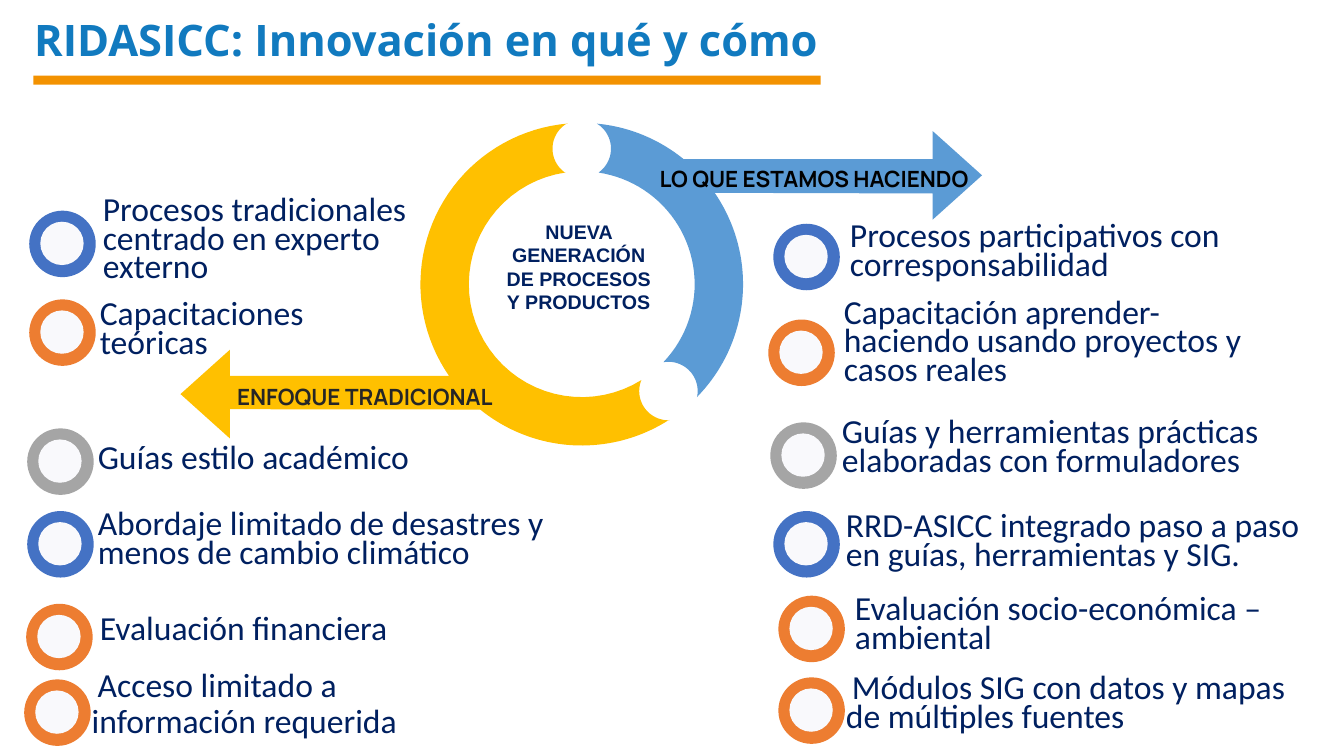
import math
from dataclasses import dataclass

import pptx
import pptx.dml.color
import pptx.enum.shapes
import pptx.enum.text
import pptx.util

EMU_PER_PX = 9144  # 100 px to the inch
ALIGN = pptx.enum.text.PP_ALIGN
ANCHOR = pptx.enum.text.MSO_ANCHOR
SHAPES = pptx.enum.shapes.MSO_SHAPE


@dataclass(frozen=True)
class Theme:
    title: str = "117ABF"
    rule: str = "F39200"
    navy: str = "002060"
    black: str = "000000"
    charcoal: str = "262626"
    disc: str = "F9F9FC"
    blue: str = "4472C4"
    orange: str = "ED7D31"
    gray: str = "A5A5A5"
    new: str = "5B9BD5"
    old: str = "FFC000"
    title_pt: int = 31
    item_pt: int = 24
    label_pt: int = 16
    centre_pt: int = 14
    leading_pt: float = 20.5
    gap_pt: int = 5


def px(value):
    return pptx.util.Emu(round(value * EMU_PER_PX))


def rgb(colour):
    return pptx.dml.color.RGBColor.from_string(colour)


def arc(centre, radius, start, end, steps=40):
    """Points along a circle; angles in degrees, clockwise from the right."""
    angles = [math.radians(start + (end - start) * i / steps) for i in range(steps + 1)]
    return [(centre[0] + radius * math.cos(a), centre[1] + radius * math.sin(a))
            for a in angles]


class SlideBuilder:
    def __init__(self, slide, theme):
        self.shapes = slide.shapes
        self.theme = theme

    def paint(self, shape, colour):
        shape.shadow.inherit = False
        shape.fill.solid()
        shape.fill.fore_color.rgb = rgb(colour)
        shape.line.fill.background()

    def block(self, kind, x, y, w, h, colour):
        self.paint(self.shapes.add_shape(kind, px(x), px(y), px(w), px(h)), colour)

    def outline(self, points, colour):
        emu = [(px(x), px(y)) for x, y in points]
        builder = self.shapes.build_freeform(*emu[0], scale=1.0)
        builder.add_line_segments(emu[1:], close=True)
        self.paint(builder.convert_to_shape(), colour)

    def text(self, lines, box, font, size, colour, bold=False, align=ALIGN.LEFT,
             anchor=ANCHOR.TOP, wrap=True):
        frame = self.shapes.add_textbox(*map(px, box)).text_frame
        frame.word_wrap = wrap
        frame.vertical_anchor = anchor
        for i, line in enumerate(lines):
            paragraph = frame.add_paragraph() if i else frame.paragraphs[0]
            paragraph.alignment = align
            run = paragraph.add_run()
            run.text = line
            run.font.name = font
            run.font.size = pptx.util.Pt(size)
            run.font.bold = bold
            run.font.color.rgb = rgb(colour)
        return frame

    def ring(self, x, y, colour):
        self.block(SHAPES.OVAL, x, y, 66, 66, colour)
        self.block(SHAPES.OVAL, x + 11, y + 11, 43, 43, self.theme.disc)

    def item(self, lines, x, y, w, rows, indent=0):
        """Tightly leaded text, its box as high as its rows; indent moves the first row."""
        frame = self.text(lines, (x, y, w, 10 + 29 * rows), "Calibri",
                          self.theme.item_pt, self.theme.navy, anchor=ANCHOR.MIDDLE)
        frame.margin_left = frame.margin_right = frame.margin_bottom = px(5)
        frame.margin_top = px(3)
        for i, paragraph in enumerate(frame.paragraphs):
            paragraph.line_spacing = pptx.util.Pt(self.theme.leading_pt)
            if i:
                paragraph.space_before = pptx.util.Pt(self.theme.gap_pt)
        if indent:
            properties = frame.paragraphs[0]._p.get_or_add_pPr()
            properties.set("marL", "0")
            properties.set("indent", str(px(indent)))

    def label(self, words, box, colour):
        self.text([words], box, "Manrope", self.theme.label_pt, colour, True,
                  ALIGN.CENTER, ANCHOR.BOTTOM, wrap=False)


def draw_cycle(page, theme):
    hub, outer, inner = (577, 282), 160, 112
    top_notch, low_notch, notch = (577, 147.5), (663, 388), 29
    new_approach = (
        [(974, 174), (925, 130), (925, 158)]
        + arc(hub, outer, -50.8, -84.6)
        + arc(top_notch, notch, -58.5, 54)
        + arc(hub, inner, -81.3, 43.5)
        + arc(low_notch, notch, -100, 12)
        + arc(hub, outer, 44.5, -34.5)
        + [(925, 192), (925, 218)])
    old_approach = (
        arc(low_notch, notch, 88, 202)
        + arc(hub, inner, 58.2, 261.8)
        + arc(top_notch, notch, 124, 240)
        + arc(hub, outer, 265, 145.4)
        + [(228, 373), (228, 347), (179, 391), (228, 435), (228, 406)]
        + arc(hub, outer, 129, 57.2))
    page.outline(new_approach, theme.new)
    page.outline(old_approach, theme.old)
    page.text(["NUEVA GENERACIÓN DE PROCESOS Y PRODUCTOS"], (489, 213, 170, 105),
              "Arial", theme.centre_pt, theme.navy, True, ALIGN.CENTER)
    page.label("ENFOQUE TRADICIONAL", (223, 375, 278, 37), theme.charcoal)
    page.label("LO QUE ESTAMOS HACIENDO", (641, 158, 333, 37), theme.black)


def main():
    theme = Theme()
    deck = pptx.Presentation()
    deck.slide_width, deck.slide_height = px(1333), px(750)
    page = SlideBuilder(deck.slides.add_slide(deck.slide_layouts[6]), theme)

    page.text(["RIDASICC: Innovación en qué y cómo"], (24, 8, 1168, 48),
              "Open Sans", theme.title_pt, theme.title, True)
    page.block(SHAPES.RECTANGLE, 33, 75, 781, 9, theme.rule)
    draw_cycle(page, theme)

    # ring colour, ring corner, then text lines, x, y, width, rows, first indent
    traditional = [
        (theme.blue, (29, 209),
         (["Procesos tradicionales centrado en experto externo"], 97, 193, 320, 3)),
        (theme.orange, (29, 297), (["Capacitaciones teóricas"], 94, 297, 320, 2)),
        (theme.gray, (27, 425), (["Guías estilo académico"], 92, 440, 533, 1)),
        (theme.blue, (27, 507),
         (["Abordaje limitado de desastres y menos de cambio climático"],
          92, 505, 523, 2)),
        (theme.orange, (26, 599), (["Evaluación financiera"], 88, 609, 484, 1, 6)),
        (theme.orange, (24, 674),
         (["Acceso limitado a", "información requerida"], 86, 669, 484, 2, 6)),
    ]
    current = [
        (theme.blue, (767, 222),
         (["Procesos participativos con corresponsabilidad"], 838, 219, 382, 2)),
        (theme.orange, (762, 317),
         (["Capacitación aprender-haciendo usando proyectos y casos reales"],
          832, 295, 407, 3)),
        (theme.gray, (764, 419),
         (["Guías y herramientas prácticas elaboradas con formuladores"],
          830, 414, 473, 2)),
        (theme.blue, (767, 507),
         (["RRD-ASICC integrado paso a paso en guías, herramientas y SIG."],
          834, 507, 499, 2)),
        (theme.orange, (772, 591),
         (["Evaluación socio-económica – ambiental"], 843, 589, 431, 2)),
        (theme.orange, (772, 672),
         (["Módulos SIG con datos y mapas de múltiples fuentes"],
          834, 668, 449, 2, 6)),
    ]
    for colour, corner, wording in traditional + current:
        page.ring(*corner, colour)
        page.item(*wording)

    deck.save("out.pptx")


if __name__ == "__main__":
    main()
